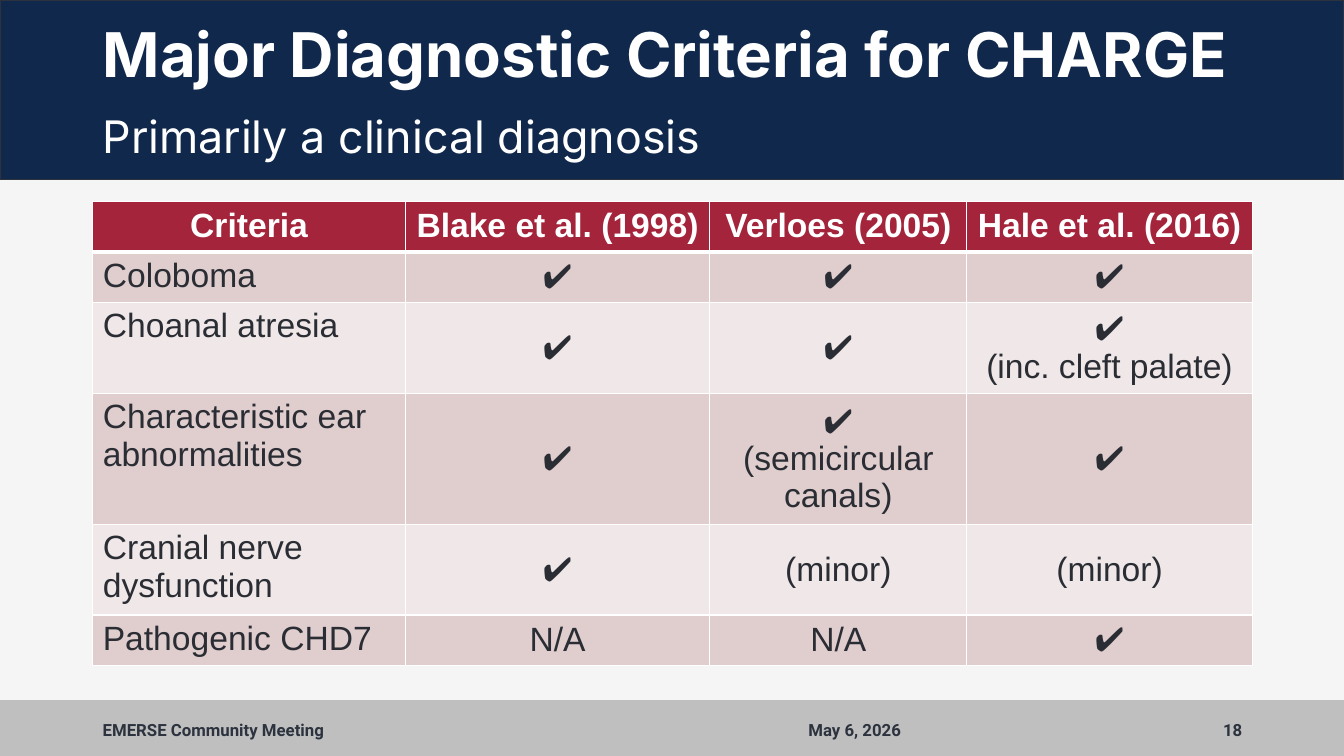
from lxml import etree
from pptx import Presentation
from pptx.dml.color import RGBColor as RGB
from pptx.enum.shapes import MSO_SHAPE as Shape
from pptx.enum.text import MSO_ANCHOR as Anchor, PP_ALIGN as Align
from pptx.oxml.ns import qn
from pptx.util import Inches, Pt

NAVY = RGB(0x10, 0x28, 0x4B)
SLATE = RGB(0x2C, 0x33, 0x3F)
GREY = RGB(0xBF, 0xBF, 0xBF)
PAPER = RGB(0xF5, 0xF5, 0xF5)
WHITE = RGB(0xFF, 0xFF, 0xFF)
RED = RGB(0xA4, 0x24, 0x3B)
ROSE = RGB(0xE0, 0xCD, 0xCE)
BLUSH = RGB(0xF0, 0xE8, 0xE8)
INK = RGB(0x2A, 0x2D, 0x33)

TITLE = dict(name="Inter", size=Pt(44), bold=True, color=WHITE)
SUB = dict(TITLE, size=Pt(32), bold=False)
FOOT = dict(name="Roboto", size=Pt(12), bold=True, color=SLATE)
HEAD = dict(name="Arial", size=Pt(24), bold=True, color=WHITE)
BODY = dict(HEAD, bold=False, color=INK)

LEFT, WIDE = 0.92, 11.5
COLS = [3.1, 3.02, 2.55, 2.83]
LINES = [1, 1, 2, 3, 2, 1]
TICK = "✔"
ROWS = [
    ["Criteria", "Blake et al. (1998)", "Verloes (2005)", "Hale et al. (2016)"],
    ["Coloboma", TICK, TICK, TICK],
    ["Choanal atresia", TICK, TICK, TICK + "\n(inc. cleft palate)"],
    ["Characteristic ear abnormalities", TICK,
     TICK + "\n(semicircular canals)", TICK],
    ["Cranial nerve dysfunction", TICK, "(minor)", "(minor)"],
    ["Pathogenic CHD7", "N/A", "N/A", TICK],
]


def style(frame, look, align, space=None):
    for para in frame.paragraphs:
        para.alignment = align
        para.line_spacing = space
        for run in para.runs:
            for key, value in look.items():
                if key == "color":
                    run.font.color.rgb = value
                else:
                    setattr(run.font, key, value)


def add_band(slide, top, height, fill, line):
    band = slide.shapes.add_shape(
        Shape.RECTANGLE, 0, Inches(top), Inches(13.33), Inches(height))
    band.shadow.inherit = False
    band.fill.solid()
    band.fill.fore_color.rgb = fill
    band.line.color.rgb = line
    band.line.width = Pt(1)


def add_text(slide, text, box, look, align=Align.LEFT,
             anchor=Anchor.MIDDLE, space=None):
    frame = slide.shapes.add_textbox(*map(Inches, box)).text_frame
    frame.word_wrap = True
    frame.vertical_anchor = anchor
    frame.text = text
    style(frame, look, align, space)


def add_edges(cell, top, bottom):
    """Draw white cell borders; top and bottom are widths in points."""
    props = cell._tc.get_or_add_tcPr()
    sides = dict(lnL=1, lnR=1, lnT=top, lnB=bottom)
    for spot, (tag, width) in enumerate(sides.items()):
        edge = etree.Element(qn("a:" + tag), w=str(Pt(width)))
        fill = etree.SubElement(edge, qn("a:solidFill"))
        etree.SubElement(fill, qn("a:srgbClr"), val=str(WHITE))
        props.insert(spot, edge)


def add_grid(slide):
    # Row height is the cell margins plus one step per line of text.
    highs = [0.1 + 0.37 * count for count in LINES]
    table = slide.shapes.add_table(
        len(ROWS), len(COLS), Inches(LEFT), Inches(2),
        Inches(WIDE), Inches(sum(highs))).table
    for col, width in zip(table.columns, COLS):
        col.width = Inches(width)
    for row, high in zip(table.rows, highs):
        row.height = Inches(high)
    for r, texts in enumerate(ROWS):
        for c, text in enumerate(texts):
            cell = table.cell(r, c)
            cell.text = text
            label = r > 0 and c == 0
            cell.vertical_anchor = Anchor.MIDDLE if r and c else Anchor.TOP
            style(cell.text_frame, BODY if r else HEAD,
                  Align.LEFT if label else Align.CENTER)
            cell.fill.solid()
            cell.fill.fore_color.rgb = (ROSE if r % 2 else BLUSH) if r else RED
            add_edges(cell, 3 if r == 1 else 1, 1 if r else 3)


def main():
    deck = Presentation()
    deck.slide_width, deck.slide_height = Inches(13.33), Inches(7.5)
    slide = deck.slides.add_slide(deck.slide_layouts[6])
    slide.background.fill.solid()
    slide.background.fill.fore_color.rgb = PAPER

    add_band(slide, 6.95, 0.55, GREY, GREY)
    add_band(slide, 0, 1.78, NAVY, SLATE)
    add_text(slide, "18", (10.82, 7.04, 1.6, 0.4), FOOT, Align.RIGHT)
    add_text(slide, "May 6, 2026", (7.92, 7.04, 2.76, 0.4), FOOT)
    add_text(slide, "EMERSE Community Meeting", (LEFT, 7.04, 6.86, 0.4), FOOT)
    add_grid(slide)
    add_text(slide, "Primarily a clinical diagnosis",
             (LEFT, 1.09, WIDE, 0.63), SUB, anchor=Anchor.TOP, space=0.9)
    add_text(slide, "Major Diagnostic Criteria for CHARGE",
             (LEFT, 0.15, WIDE, 0.85), TITLE, space=0.9)
    deck.save("out.pptx")


if __name__ == "__main__":
    main()
